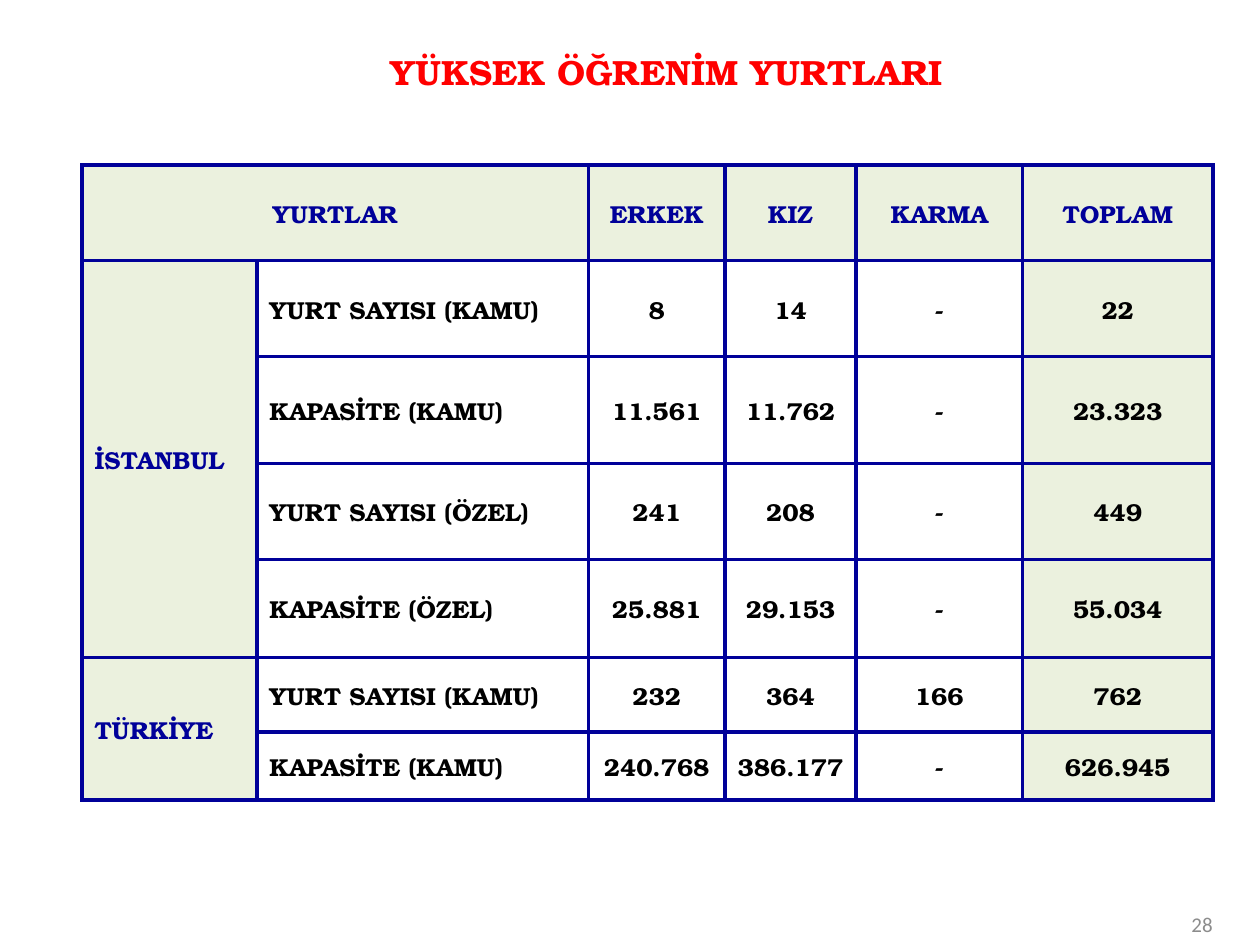
from lxml.etree import SubElement
from pptx import Presentation
from pptx.dml.color import RGBColor
from pptx.enum.text import MSO_ANCHOR, MSO_AUTO_SIZE, PP_ALIGN
from pptx.oxml.ns import qn
from pptx.util import Pt

NAVY, RED, BLACK, GREY = "000099", "FF0000", "000000", "8C8C8C"
GREEN, WHITE = "EBF1DE", "FFFFFF"

COLUMN_WIDTHS = [100, 189.5, 78, 75, 95, 109]
ROW_HEIGHTS = [54.7, 54.7, 61.2, 54.7, 56.2, 42.5, 39]
ROWS = [
    ["YURTLAR", "", "ERKEK", "KIZ", "KARMA", "TOPLAM"],
    ["İSTANBUL", "YURT SAYISI (KAMU)", "8", "14", "-", "22"],
    ["", "KAPASİTE (KAMU)", "11.561", "11.762", "-", "23.323"],
    ["", "YURT SAYISI (ÖZEL)", "241", "208", "-", "449"],
    ["", "KAPASİTE (ÖZEL)", "25.881", "29.153", "-", "55.034"],
    ["TÜRKİYE", "YURT SAYISI (KAMU)", "232", "364", "166", "762"],
    ["", "KAPASİTE (KAMU)", "240.768", "386.177", "-", "626.945"],
]
# First and last cell of each merged block, as (row, column)
MERGES = [((0, 0), (0, 1)), ((1, 0), (4, 0)), ((5, 0), (6, 0))]


def color(value):
    return RGBColor.from_string(value)


class PageBuilder:
    font = "TeX Gyre Bonum"
    border_width = 2.25

    def __init__(self, page):
        self.page = page

    def format(self, para, size, hex_color, align, font=None, bold=True):
        para.alignment = align
        para.font.name = font or self.font
        para.font.size = Pt(size)
        para.font.bold = bold
        para.font.color.rgb = color(hex_color)

    def title(self, text, left, top, width, height, inset):
        box = self.page.shapes.title
        box.left, box.top, box.width, box.height = map(Pt, (left, top, width, height))
        frame = box.text_frame
        frame.text = text
        frame.auto_size = MSO_AUTO_SIZE.NONE
        frame.vertical_anchor = MSO_ANCHOR.MIDDLE
        frame.margin_left = Pt(inset)
        self.format(frame.paragraphs[0], 20, RED, PP_ALIGN.CENTER)

    def page_number(self, text, left, top, width, height):
        box = self.page.shapes.add_textbox(*map(Pt, (left, top, width, height)))
        frame = box.text_frame
        frame.word_wrap = True
        frame.vertical_anchor = MSO_ANCHOR.MIDDLE
        frame.text = text
        self.format(frame.paragraphs[0], 12, GREY, PP_ALIGN.RIGHT, "Calibri", False)

    def borders(self, cell):
        properties = cell._tc.get_or_add_tcPr()
        for side in ("a:lnL", "a:lnR", "a:lnT", "a:lnB"):
            line = SubElement(properties, qn(side), w=str(Pt(self.border_width)))
            fill = SubElement(line, qn("a:solidFill"))
            SubElement(fill, qn("a:srgbClr"), val=NAVY)

    def cell(self, cell, text, row, column):
        is_header = row == 0
        is_label = column < 2 and not is_header
        self.borders(cell)
        cell.fill.solid()
        shaded = is_header or column in (0, len(COLUMN_WIDTHS) - 1)
        cell.fill.fore_color.rgb = color(GREEN if shaded else WHITE)
        cell.vertical_anchor = MSO_ANCHOR.MIDDLE
        if not is_header and not is_label:
            cell.margin_left = cell.margin_right = Pt(1)
        cell.text = text
        self.format(
            cell.text_frame.paragraphs[0],
            14,
            NAVY if is_header or column == 0 else BLACK,
            PP_ALIGN.LEFT if is_label else PP_ALIGN.CENTER,
        )

    def table(self, left, top):
        size = (sum(COLUMN_WIDTHS), sum(ROW_HEIGHTS))
        frame = self.page.shapes.add_table(
            len(ROWS), len(COLUMN_WIDTHS), *map(Pt, (left, top, *size))
        )
        table = frame.table
        for column, width in zip(table.columns, COLUMN_WIDTHS):
            column.width = Pt(width)
        for row, height in zip(table.rows, ROW_HEIGHTS):
            row.height = Pt(height)
        for row, texts in enumerate(ROWS):
            for column, text in enumerate(texts):
                self.cell(table.cell(row, column), text, row, column)
        for first, last in MERGES:
            table.cell(*first).merge(table.cell(*last))


def main():
    deck = Presentation()
    deck.slide_width, deck.slide_height = Pt(720), Pt(540)
    builder = PageBuilder(deck.slides.add_slide(deck.slide_layouts[5]))

    # Page number
    builder.page_number("28", 532, 513.5, 168, 28.8)
    # Heading, nudged right by a wider left inset
    builder.title("YÜKSEK ÖĞRENİM YURTLARI", 42.5, 9.4, 652.3, 62.6, 32)
    # Dormitory counts and capacities
    builder.table(46.8, 94.3)

    deck.save("out.pptx")


if __name__ == "__main__":
    main()
